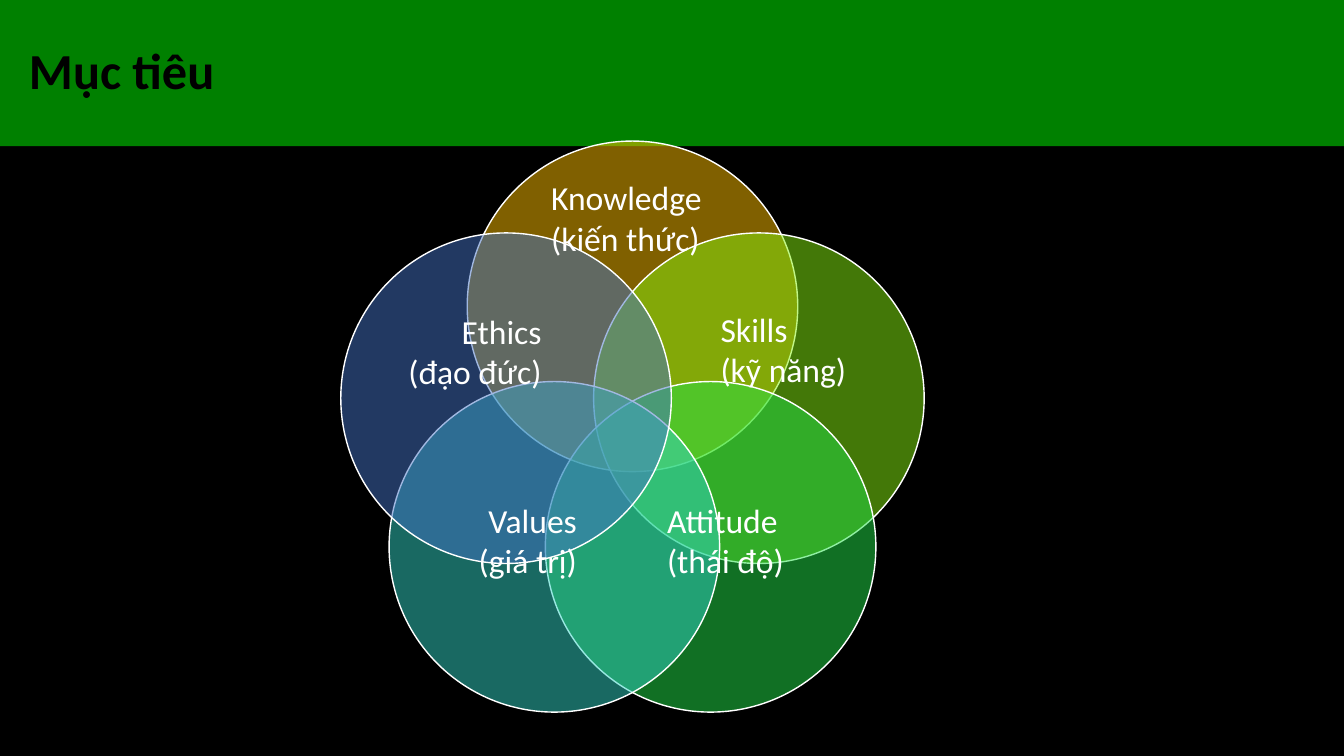
from math import cos, radians, sin

from lxml.etree import SubElement
from pptx import Presentation
from pptx.dml.color import RGBColor
from pptx.enum.shapes import MSO_SHAPE as Shape
from pptx.enum.text import MSO_ANCHOR as Anchor, MSO_AUTO_SIZE as AutoSize, PP_ALIGN as Align
from pptx.oxml.ns import qn
from pptx.util import Cm, Pt

# Content: term, translation, circle colour, label position (cm), alignment
TITLE = "Mục tiêu"
GOALS = [
    ("Knowledge", "(kiến thức)", "FFC000", (13.64, 4.34), Align.LEFT),
    ("Skills", "(kỹ năng)", "86F011", (17.91, 7.65), Align.LEFT),
    ("Attitude", "(thái độ)", "23E148", (16.56, 12.47), Align.LEFT),
    ("Values", "(giá trị)", "33D2C5", (10.29, 12.47), Align.RIGHT),
    ("Ethics", "(đạo đức)", "4472C4", (9.4, 7.7), Align.RIGHT),
]


class Theme:
    font = "Calibri"
    background = "000000"
    banner = "008000"
    title_color = "000000"
    light = "FFFFFF"
    title_size = Pt(36)
    label_size = Pt(24)
    outline = Pt(1)
    circle_alpha = 50


# Layout in cm
SLIDE_WIDTH, SLIDE_HEIGHT = 33.87, 19.05
BANNER_HEIGHT = 3.68
RING_X, RING_Y, RING_RADIUS = 15.94, 11.07, 3.35
DIAMETER = 8.33
LABEL_WIDTH, LABEL_HEIGHT = 4.5, 2.31


def paint(fill, color, alpha=100):
    fill.solid()
    fill.fore_color.rgb = RGBColor.from_string(color)
    if alpha < 100:
        color_element = fill._xPr.find(qn("a:solidFill"))[0]
        SubElement(color_element, qn("a:alpha")).set("val", str(alpha * 1000))


def add_run(paragraph, text, size, color, bold=False):
    run = paragraph.add_run()
    run.text = text
    run.font.name, run.font.size, run.font.bold = Theme.font, size, bold
    run.font.color.rgb = RGBColor.from_string(color)


def format_title(title):
    title.left, title.top = Cm(0), Cm(0)
    title.width, title.height = Cm(SLIDE_WIDTH), Cm(BANNER_HEIGHT)
    paint(title.fill, Theme.banner)
    frame = title.text_frame
    frame.auto_size = AutoSize.NONE
    frame.vertical_anchor = Anchor.MIDDLE
    frame.margin_left = Cm(0.73)
    paragraph = frame.paragraphs[0]
    paragraph.alignment = Align.LEFT
    paragraph.line_spacing = 0.9
    add_run(paragraph, TITLE, Theme.title_size, Theme.title_color, bold=True)


def add_circle(shapes, index, color):
    angle = radians(360 / len(GOALS) * index)
    left = RING_X + RING_RADIUS * sin(angle) - DIAMETER / 2
    top = RING_Y - RING_RADIUS * cos(angle) - DIAMETER / 2
    circle = shapes.add_shape(Shape.OVAL, Cm(left), Cm(top), Cm(DIAMETER), Cm(DIAMETER))
    circle.shadow.inherit = False
    paint(circle.fill, color, Theme.circle_alpha)
    paint(circle.line.fill, Theme.light)
    circle.line.width = Theme.outline


def add_label(shapes, term, translation, position, alignment):
    left, top = position
    label = shapes.add_textbox(Cm(left), Cm(top), Cm(LABEL_WIDTH), Cm(LABEL_HEIGHT))
    label.text_frame.word_wrap = True
    paragraph = label.text_frame.paragraphs[0]
    paragraph.alignment = alignment
    add_run(paragraph, term, Theme.label_size, Theme.light)
    paragraph.add_line_break()
    add_run(paragraph, translation, Theme.label_size, Theme.light)


def main():
    presentation = Presentation()
    presentation.slide_width, presentation.slide_height = Cm(SLIDE_WIDTH), Cm(SLIDE_HEIGHT)
    slide = presentation.slides.add_slide(presentation.slide_layouts[5])
    paint(slide.background.fill, Theme.background)

    # Title banner
    format_title(slide.shapes.title)

    # Ring of overlapping circles, clockwise from the top
    circles = slide.shapes.add_group_shape()
    for index, (_, _, color, _, _) in enumerate(GOALS):
        add_circle(circles.shapes, index, color)

    # Labels over the circles
    for term, translation, _, position, alignment in GOALS:
        add_label(slide.shapes, term, translation, position, alignment)

    presentation.save("out.pptx")


if __name__ == "__main__":
    main()
